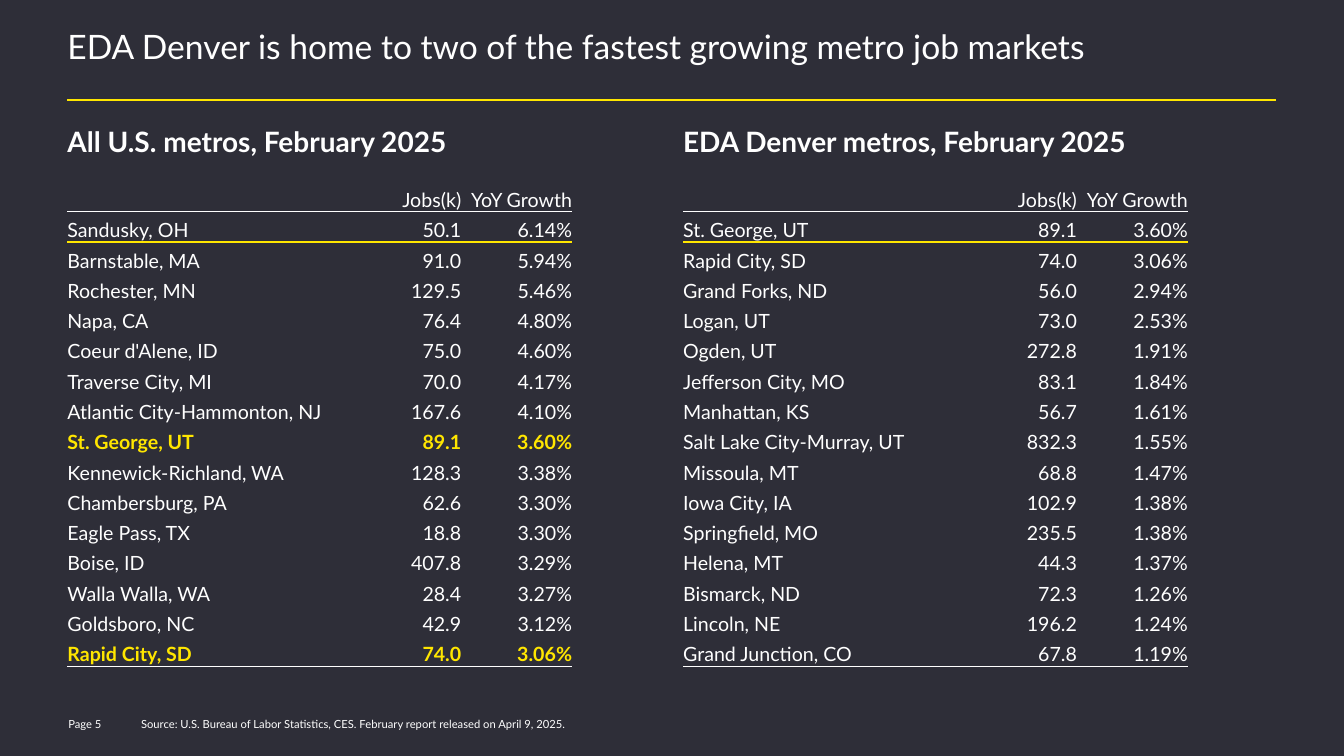
"""Build a slide comparing job growth in all U.S. metros and EDA Denver metros."""
from lxml import etree
from pptx import Presentation
from pptx.dml.color import RGBColor
from pptx.enum.shapes import MSO_CONNECTOR
from pptx.enum.text import MSO_ANCHOR, PP_ALIGN
from pptx.oxml.ns import qn
from pptx.util import Pt

DARK = RGBColor(0x2E, 0x2E, 0x38)
WHITE = RGBColor(0xFF, 0xFF, 0xFF)
GOLD = RGBColor(0xFF, 0xE6, 0x00)
LEFT, RIGHT = PP_ALIGN.LEFT, PP_ALIGN.RIGHT
TOP, MIDDLE, BOTTOM = MSO_ANCHOR.TOP, MSO_ANCHOR.MIDDLE, MSO_ANCHOR.BOTTOM
STRAIGHT = MSO_CONNECTOR.STRAIGHT
PLAIN = "{2D5ABB26-0587-4C30-8999-92F81FD0307C}"
FONT = "Lato"
WIDTHS = (202.3, 79.2, 79.2)
ROW = 21.65

HEAD = ("", "Jobs(k)", "YoY Growth")
NATION = [
    ("Sandusky, OH", "50.1", "6.14%"),
    ("Barnstable, MA", "91.0", "5.94%"),
    ("Rochester, MN", "129.5", "5.46%"),
    ("Napa, CA", "76.4", "4.80%"),
    ("Coeur d'Alene, ID", "75.0", "4.60%"),
    ("Traverse City, MI", "70.0", "4.17%"),
    ("Atlantic City-Hammonton, NJ", "167.6", "4.10%"),
    ("St. George, UT", "89.1", "3.60%"),
    ("Kennewick-Richland, WA", "128.3", "3.38%"),
    ("Chambersburg, PA", "62.6", "3.30%"),
    ("Eagle Pass, TX", "18.8", "3.30%"),
    ("Boise, ID", "407.8", "3.29%"),
    ("Walla Walla, WA", "28.4", "3.27%"),
    ("Goldsboro, NC", "42.9", "3.12%"),
    ("Rapid City, SD", "74.0", "3.06%"),
]
DENVER = [
    ("St. George, UT", "89.1", "3.60%"),
    ("Rapid City, SD", "74.0", "3.06%"),
    ("Grand Forks, ND", "56.0", "2.94%"),
    ("Logan, UT", "73.0", "2.53%"),
    ("Ogden, UT", "272.8", "1.91%"),
    ("Jefferson City, MO", "83.1", "1.84%"),
    ("Manhattan, KS", "56.7", "1.61%"),
    ("Salt Lake City-Murray, UT", "832.3", "1.55%"),
    ("Missoula, MT", "68.8", "1.47%"),
    ("Iowa City, IA", "102.9", "1.38%"),
    ("Springfield, MO", "235.5", "1.38%"),
    ("Helena, MT", "44.3", "1.37%"),
    ("Bismarck, ND", "72.3", "1.26%"),
    ("Lincoln, NE", "196.2", "1.24%"),
    ("Grand Junction, CO", "67.8", "1.19%"),
]
RULES = {0: (WHITE, 0.5), 1: (GOLD, 1.5), len(NATION): (WHITE, 0.5)}
PANELS = [
    (48.2, "All U.S. metros, February 2025", NATION, {"St. George, UT", "Rapid City, SD"}),
    (488.2, "EDA Denver metros, February 2025", DENVER, set()),
]


def write(para, text, size, color=WHITE, bold=False):
    run = para.add_run()
    run.text = text
    font = run.font
    font.name, font.size, font.bold = FONT, Pt(size), bold
    font.color.rgb = color


def label(box, text, size, bold=False, anchor=TOP):
    frame = slide.shapes.add_textbox(*map(Pt, box)).text_frame
    frame.word_wrap = True
    frame.vertical_anchor = anchor
    frame.margin_left = frame.margin_right = frame.margin_top = frame.margin_bottom = 0
    para = frame.paragraphs[0]
    write(para, text, size, bold=bold)
    return para


deck = Presentation()
deck.slide_width, deck.slide_height = Pt(960.48), Pt(540)
slide = deck.slides.add_slide(deck.slide_layouts[6])
slide.background.fill.solid()
slide.background.fill.fore_color.rgb = DARK

rule = slide.shapes.add_connector(STRAIGHT, Pt(48.2), Pt(71.4), Pt(912.2), Pt(71.4))
rule.line.color.rgb = GOLD
rule.line.width = Pt(1.5)
etree.SubElement(rule._element.spPr, qn("a:effectLst"))

title = label((48.2, 23, 864.7, 46.8),
              "EDA Denver is home to two of the fastest growing metro job markets", 24)
title.line_spacing = 0.85

for left, name, metros, marked in PANELS:
    label((left, 89.3, 424.8, 50.4), name, 20, bold=True)
    rows = [HEAD] + metros
    table = slide.shapes.add_table(len(rows), len(HEAD), Pt(left), Pt(129.6),
                                   Pt(sum(WIDTHS)), Pt(ROW * len(rows))).table
    table.first_row = table.horz_banding = False
    table._tbl.tblPr.find(qn("a:tableStyleId")).text = PLAIN
    for col, width in zip(table.columns, WIDTHS):
        col.width = Pt(width)
    for r, values in enumerate(rows):
        table.rows[r].height = Pt(ROW)
        hot = values[0] in marked
        for c, text in enumerate(values):
            cell = table.cell(r, c)
            cell.margin_left = cell.margin_right = cell.margin_top = cell.margin_bottom = 0
            cell.vertical_anchor = BOTTOM
            para = cell.text_frame.paragraphs[0]
            para.alignment = RIGHT if c else LEFT
            if text:
                write(para, text, 14, GOLD if hot else WHITE, hot)
            else:
                etree.SubElement(para._p, qn("a:endParaRPr"), sz="1400")
            if r in RULES:
                color, weight = RULES[r]
                edge = etree.SubElement(cell._tc.get_or_add_tcPr(), qn("a:lnB"),
                                        w=str(Pt(weight)))
                paint = etree.SubElement(edge, qn("a:solidFill"))
                etree.SubElement(paint, qn("a:srgbClr"), val=str(color))
            cell.fill.background()

label((48.8, 509.8, 52.6, 14.4), "Page 5", 8, anchor=MIDDLE)
label((100.8, 509.8, 394.6, 14.4),
      "Source: U.S. Bureau of Labor Statistics, CES. February report released on April 9, 2025.",
      8, anchor=MIDDLE)

deck.save("out.pptx")
